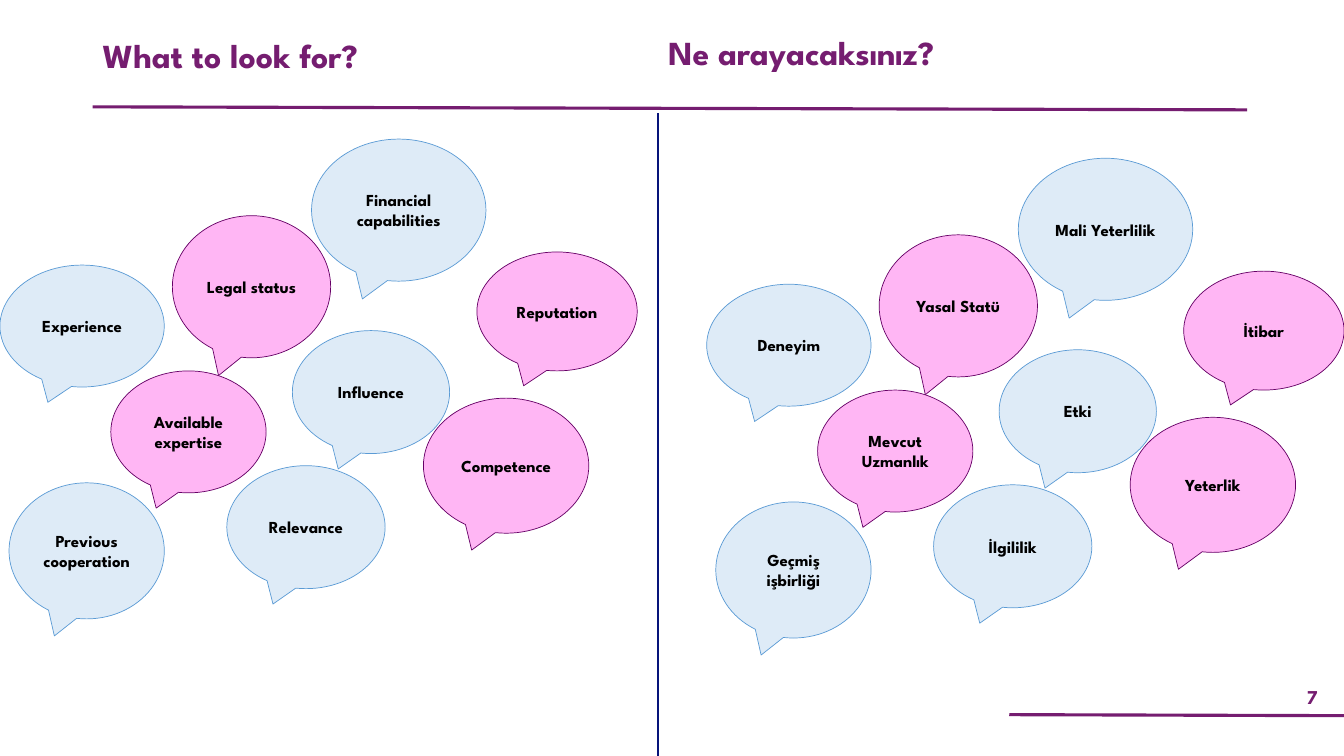
from lxml import etree
from pptx import Presentation
from pptx.dml.color import RGBColor
from pptx.enum.shapes import MSO_CONNECTOR, MSO_SHAPE
from pptx.enum.text import MSO_ANCHOR, PP_ALIGN
from pptx.oxml.ns import qn
from pptx.util import Inches, Pt

FONT = "League Spartan"
PURPLE = RGBColor(0x75, 0x1D, 0x70)
NAVY = RGBColor(0x07, 0x14, 0x7A)
BLACK = RGBColor(0, 0, 0)
PALE_BLUE = RGBColor(0xDE, 0xEB, 0xF7)
BLUE = RGBColor(0x5B, 0x9B, 0xD5)
PINK = RGBColor(0xFF, 0xB6, 0xF4)
PLUM = RGBColor(0x66, 0x00, 0x66)
COOL, WARM = (PALE_BLUE, BLUE), (PINK, PLUM)

WIDTH, HEIGHT = 13.33, 7.5

# Bubbles: left, top, width, height inside a panel, then colours and both labels
BUBBLES = [
    (0, 2.63, 1.63, 1.21, COOL, "Experience", "Deneyim"),
    (1.71, 2.14, 1.57, 1.41, WARM, "Legal status", "Yasal Statü"),
    (3.09, 1.38, 1.73, 1.41, COOL, "Financial capabilities", "Mali Yeterlilik"),
    (4.73, 2.5, 1.59, 1.18, WARM, "Reputation", "İtibar"),
    (2.9, 3.28, 1.56, 1.22, COOL, "Influence", "Etki"),
    (1.1, 3.68, 1.54, 1.21, WARM, "Available expertise", "Mevcut Uzmanlık"),
    (0.09, 4.79, 1.54, 1.35, COOL, "Previous cooperation", "Geçmiş işbirliği"),
    (2.25, 4.62, 1.57, 1.22, COOL, "Relevance", "İlgililik"),
    (4.2, 3.95, 1.64, 1.34, WARM, "Competence", "Yeterlik"),
]


def write(shape, text, size, color, align):
    frame = shape.text_frame
    frame.word_wrap = True
    frame.text = text
    para = frame.paragraphs[0]
    para.alignment = align
    font = para.runs[0].font
    font.name, font.size, font.bold = FONT, Pt(size), True
    font.color.rgb = color
    return para


def add_text(page, box, text, size, align):
    shape = page.shapes.add_textbox(*map(Inches, box))
    return shape, write(shape, text, size, PURPLE, align)


def add_rule(page, start, end, color, weight):
    rule = page.shapes.add_connector(
        MSO_CONNECTOR.STRAIGHT, *map(Inches, start + end))
    rule.line.color.rgb = color
    rule.line.width = Pt(weight)
    etree.SubElement(rule._element.spPr, qn("a:effectLst"))


def add_title(page, box, text):
    para = add_text(page, box, text, 24, PP_ALIGN.JUSTIFY)[1]
    para.line_spacing = 0.9


def add_bubble(page, box, colors, label):
    bubble = page.shapes.add_shape(MSO_SHAPE.OVAL_CALLOUT, *map(Inches, box))
    bubble.shadow.inherit = False
    fill, outline = colors
    bubble.fill.solid()
    bubble.fill.fore_color.rgb = fill
    bubble.line.color.rgb = outline
    bubble.line.width = Pt(0.5)
    bubble.text_frame.vertical_anchor = MSO_ANCHOR.MIDDLE
    write(bubble, label, 12, BLACK, PP_ALIGN.CENTER)


def add_panel(page, left, top, language):
    for x, y, width, height, colors, *labels in BUBBLES:
        add_bubble(page, (left + x, top + y, width, height), colors,
                   labels[language])


def add_frame(page):
    # Heading rule, footer rule and page number
    add_rule(page, (0.92, 1.06), (12.37, 1.09), PURPLE, 2.25)
    add_rule(page, (10.01, 7.09), (13.35, 7.1), PURPLE, 2.25)
    number, _ = add_text(page, (WIDTH - 0.63, 6.73, 0.63, 0.36), "7", 14,
                         PP_ALIGN.CENTER)
    number.text_frame.vertical_anchor = MSO_ANCHOR.MIDDLE


def main():
    deck = Presentation()
    deck.slide_width, deck.slide_height = Inches(WIDTH), Inches(HEIGHT)
    page = deck.slides.add_slide(deck.slide_layouts[6])
    add_frame(page)

    # English half
    add_title(page, (0.92, 0.34, 9.73, 0.65), "What to look for?")
    add_panel(page, 0, 0, 0)

    # Turkish half
    add_panel(page, 7.01, 0.19, 1)
    add_rule(page, (6.53, HEIGHT), (6.53, 1.12), NAVY, 1.5)
    add_title(page, (6.53, 0.31, 3.79, 0.51), "Ne arayacaksınız?")
    deck.save("out.pptx")


if __name__ == "__main__":
    main()
